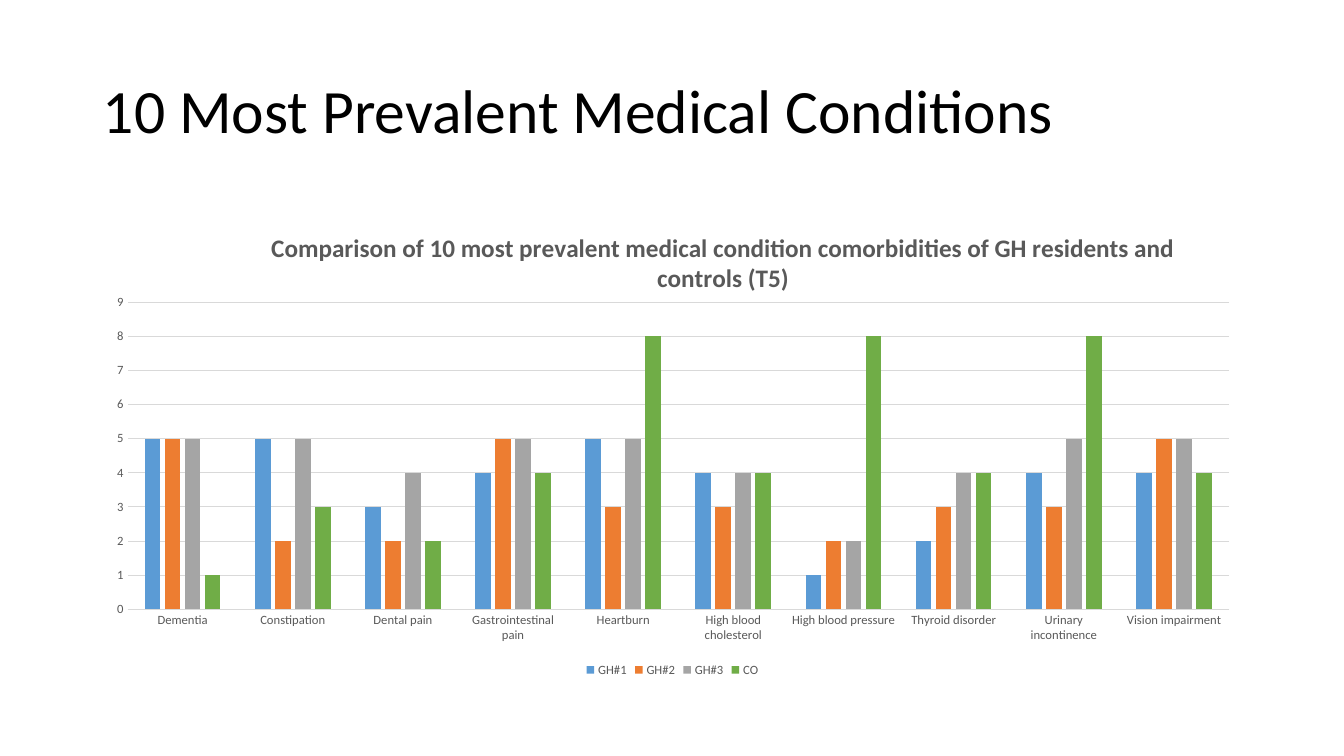
from pptx import Presentation
from pptx.chart.data import CategoryChartData
from pptx.dml.color import RGBColor
from pptx.enum.chart import XL_CHART_TYPE, XL_LEGEND_POSITION, XL_TICK_MARK
from pptx.enum.text import MSO_ANCHOR, PP_ALIGN
from pptx.oxml import parse_xml
from pptx.oxml.ns import nsdecls, qn
from pptx.util import Inches, Pt

TITLE = "10 Most Prevalent Medical Conditions"
CHART_TITLE = ("Comparison of 10 most prevalent medical condition comorbidities "
               "of GH residents and controls (T5)")
CONDITIONS = ["Dementia", "Constipation", "Dental pain", "Gastrointestinal pain",
              "Heartburn", "High blood cholesterol", "High blood pressure",
              "Thyroid disorder", "Urinary incontinence", "Vision impairment"]
GROUPS = [
    ("GH#1", RGBColor(0x5B, 0x9B, 0xD5), (5, 5, 3, 4, 5, 4, 1, 2, 4, 4)),
    ("GH#2", RGBColor(0xED, 0x7D, 0x31), (5, 2, 2, 5, 3, 3, 2, 3, 3, 5)),
    ("GH#3", RGBColor(0xA5, 0xA5, 0xA5), (5, 5, 4, 5, 5, 4, 2, 4, 5, 5)),
    ("CO", RGBColor(0x70, 0xAD, 0x47), (1, 3, 2, 4, 8, 4, 8, 4, 8, 4)),
]

FONT = "Calibri"
BLACK = RGBColor(0, 0, 0)
GRAY = RGBColor(0x59, 0x59, 0x59)
RULE = RGBColor(0xD9, 0xD9, 0xD9)
CLUSTERED = XL_CHART_TYPE.COLUMN_CLUSTERED
BOTTOM = XL_LEGEND_POSITION.BOTTOM
NO_TICK = XL_TICK_MARK.NONE
MIDDLE = MSO_ANCHOR.MIDDLE
LEFT = PP_ALIGN.LEFT

WIDTH, HEIGHT = 13.33, 7.5
MARGIN = 0.92
CONTENT_W = 11.5


def format_font(font, size, color=GRAY, bold=False):
    font.name = FONT
    font.size = Pt(size)
    font.color.rgb = color
    font.bold = bold


def write(tf, text, **style):
    p = tf.paragraphs[0]
    r = p.add_run()
    r.text = text
    format_font(r.font, **style)
    return p


def rule(line):
    line.color.rgb = RULE
    line.width = Pt(0.75)


def place(parent, index, **shares):
    """Fix a chart part's position as shares of the chart's size."""
    for old in parent.findall(qn("c:layout")):
        parent.remove(old)
    target = '<c:layoutTarget val="inner"/>' if "w" in shares else ""
    modes = "".join(f'<c:{k}Mode val="edge"/>' for k in "xy")
    values = "".join(f'<c:{k} val="{v}"/>' for k, v in shares.items())
    parent.insert(index, parse_xml(
        f'<c:layout {nsdecls("c")}><c:manualLayout>{target}{modes}{values}'
        '</c:manualLayout></c:layout>'))


def add_title(slide):
    sp = slide.shapes.title
    sp.left, sp.top = Inches(MARGIN), Inches(0.4)
    sp.width, sp.height = Inches(CONTENT_W), Inches(1.45)
    tf = sp.text_frame
    tf.word_wrap = True
    tf.vertical_anchor = MIDDLE
    p = write(tf, TITLE, size=44, color=BLACK)
    p.alignment = LEFT
    p.line_spacing = 0.9


def add_conditions_chart(slide):
    data = CategoryChartData()
    data.categories = CONDITIONS
    for name, _, values in GROUPS:
        data.add_series(name, values)
    chart = slide.shapes.add_chart(CLUSTERED, Inches(MARGIN), Inches(2),
                                   Inches(CONTENT_W), Inches(4.76), data).chart
    format_font(chart.font, 10, BLACK)

    chart.has_title = True
    title = chart.chart_title
    write(title.text_frame, CHART_TITLE, size=18, bold=True)
    title.include_in_layout = False
    place(title._element, 1, x=0.15, y=0.05)

    plot = chart.plots[0]
    plot.gap_width = 219
    plot.overlap = -27
    plot.vary_by_categories = False
    for series, (_, color, _) in zip(plot.series, GROUPS):
        series.format.fill.solid()
        series.format.fill.fore_color.rgb = color
    place(chart._chartSpace.chart.plotArea, 0, x=0.03, y=0.21, w=0.95, h=0.64)

    for axis in (chart.category_axis, chart.value_axis):
        axis.major_tick_mark = axis.minor_tick_mark = NO_TICK
        format_font(axis.tick_labels.font, 9)
    rule(chart.category_axis.format.line)
    values = chart.value_axis
    values.minimum_scale, values.maximum_scale, values.major_unit = 0, 9, 1
    values.format.line.fill.background()
    rule(values.major_gridlines.format.line)

    chart.has_legend = True
    chart.legend.position = BOTTOM
    chart.legend.include_in_layout = False
    format_font(chart.legend.font, 9)


def main():
    prs = Presentation()
    prs.slide_width, prs.slide_height = Inches(WIDTH), Inches(HEIGHT)
    slide = prs.slides.add_slide(prs.slide_layouts.get_by_name("Title Only"))
    add_title(slide)
    add_conditions_chart(slide)
    prs.save("out.pptx")


if __name__ == "__main__":
    main()
